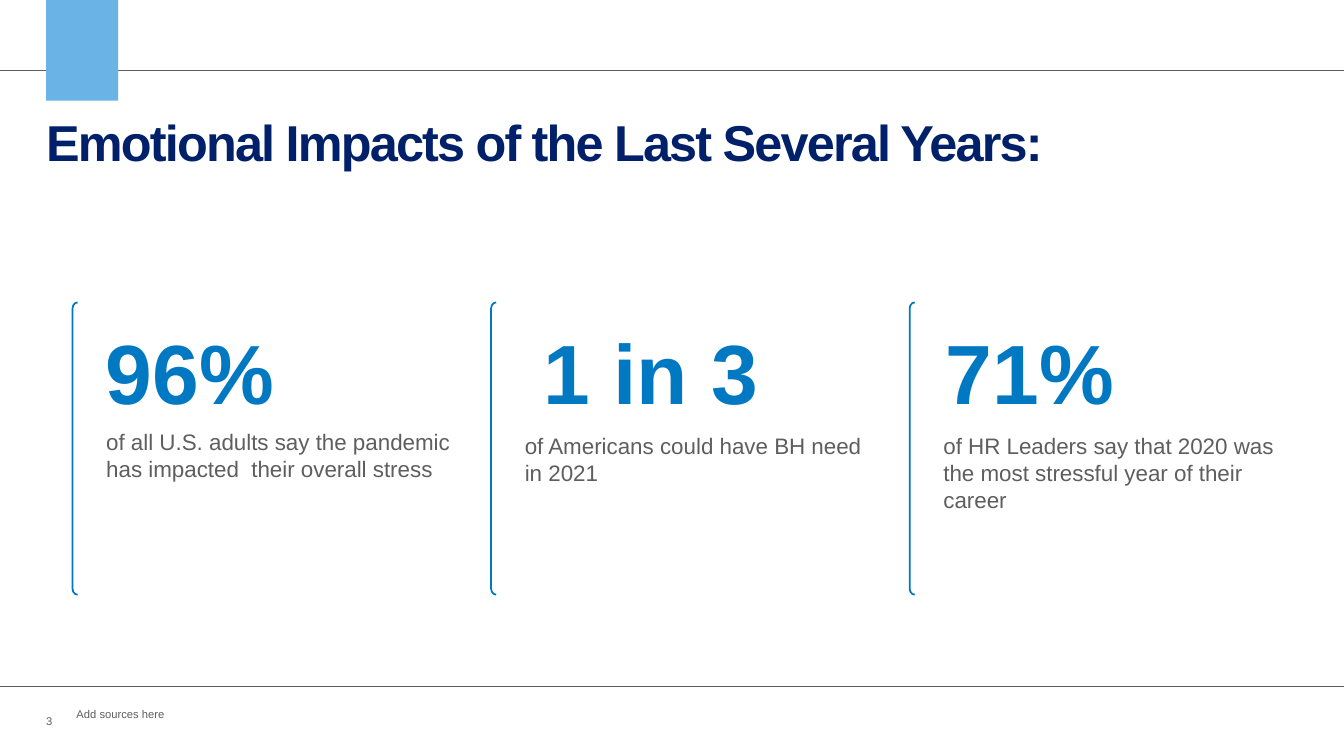
"""Build the slide on the emotional impacts of the last several years."""
from lxml import etree
from pptx import Presentation
from pptx.dml.color import RGBColor
from pptx.enum.shapes import MSO_CONNECTOR as Connector, MSO_SHAPE as Shape
from pptx.enum.text import MSO_ANCHOR as Anchor, MSO_AUTO_SIZE as AutoSize, PP_ALIGN as Align
from pptx.oxml.ns import qn
from pptx.util import Pt

TITLE = "Emotional Impacts of the Last Several Years:"
STATS = [
    {"figure": "96%", "figure_left": 58.3, "figure_width": 154.8, "text_top": 302.4,
     "text": "of all U.S. adults say the pandemic has impacted  their overall stress"},
    {"figure": "1 in 3", "figure_left": 358.6, "figure_width": 212.4, "text_top": 305,
     "text": "of Americans could have BH need in 2021"},
    {"figure": "71%", "figure_left": 658.1, "figure_width": 154.8, "text_top": 305,
     "text": "of HR Leaders say that 2020 was the most stressful year of their career"},
]
SOURCES = "Add sources here"
PAGE_NUMBER = "3"

NAVY, BLUE, SKY, GREY = "002069", "0079C2", "69B3E7", "5E5E5E"
WIDTH, HEIGHT = 960, 540
MARGIN = 33
RULE_TOPS = (50, 490)
BRACKET_LEFT, BRACKET_TOP, BRACKET_WIDTH, BRACKET_HEIGHT = 51.8, 216, 3.6, 208.8
PITCH = 299
TEXT_OFFSET = 17


def color(value):
    return RGBColor.from_string(value)


def place(shape, left, top, width, height):
    shape.left, shape.top = Pt(left), Pt(top)
    shape.width, shape.height = Pt(width), Pt(height)


def write(box, text, size, ink, bold=False, align=Align.LEFT, anchor=Anchor.TOP,
          inset=(7.2, 3.6), wrap=True, line_spacing=None, tracking=None):
    frame = box.text_frame
    frame.word_wrap = wrap
    frame.auto_size = AutoSize.NONE
    frame.vertical_anchor = anchor
    frame.margin_left = frame.margin_right = Pt(inset[0])
    frame.margin_top = frame.margin_bottom = Pt(inset[1])
    para = frame.paragraphs[0]
    para.alignment = align
    if line_spacing:
        para.line_spacing = line_spacing
    span = para.add_run()
    span.text = text
    span.font.name, span.font.size, span.font.bold = "Arial", Pt(size), bold
    span.font.color.rgb = color(ink)
    if tracking:
        span.font._element.set("spc", str(round(tracking * 100)))


def add_text(page, text, left, top, width, height, **style):
    box = page.shapes.add_textbox(Pt(left), Pt(top), Pt(width), Pt(height))
    write(box, text, **style)


def add_rule(page, top):
    rule = page.shapes.add_connector(Connector.STRAIGHT, Pt(0), Pt(top), Pt(WIDTH), Pt(top))
    rule.line.color.rgb = color(GREY)
    rule.line.width = Pt(0.25)
    etree.SubElement(rule._element.spPr, qn("a:effectLst"))


def add_tab(page):
    tab = page.shapes.add_shape(Shape.RECTANGLE, Pt(MARGIN), Pt(0), Pt(51.4), Pt(72))
    tab.shadow.inherit = False
    tab.fill.solid()
    tab.fill.fore_color.rgb = color(SKY)
    tab.line.fill.background()


def add_stat(page, index, stat):
    left = BRACKET_LEFT + index * PITCH
    bracket = page.shapes.add_shape(Shape.LEFT_BRACKET, Pt(left), Pt(BRACKET_TOP),
                                    Pt(BRACKET_WIDTH), Pt(BRACKET_HEIGHT))
    bracket.adjustments[0] = 1.2
    bracket.shadow.inherit = False
    bracket.fill.background()
    bracket.line.color.rgb = color(BLUE)
    bracket.line.width = Pt(1.25)
    add_text(page, stat["figure"], stat["figure_left"], 225.4, stat["figure_width"], 80,
             size=60, ink=BLUE, bold=True, align=Align.CENTER)
    add_text(page, stat["text"], left + TEXT_OFFSET, stat["text_top"], 266, 65,
             size=16, ink=GREY)


def main():
    deck = Presentation()
    deck.slide_width, deck.slide_height = Pt(WIDTH), Pt(HEIGHT)
    page = deck.slides.add_slide(deck.slide_layouts[5])
    for top in RULE_TOPS:
        add_rule(page, top)
    add_tab(page)
    title = page.shapes.title
    place(title, MARGIN, 85.7, 892, 42.5)
    write(title, TITLE, size=36, ink=NAVY, bold=True, inset=(0, 0),
          line_spacing=0.85, tracking=-1.3)
    for index, stat in enumerate(STATS):
        add_stat(page, index, stat)
    add_text(page, PAGE_NUMBER, MARGIN, 500.6, 28.8, 28.8,
             size=8, ink=GREY, anchor=Anchor.MIDDLE, inset=(0, 0))
    add_text(page, SOURCES, 47.5, 501.8, 78.5, 26.6, size=8, ink=GREY, wrap=False)
    deck.save("out.pptx")


if __name__ == "__main__":
    main()
